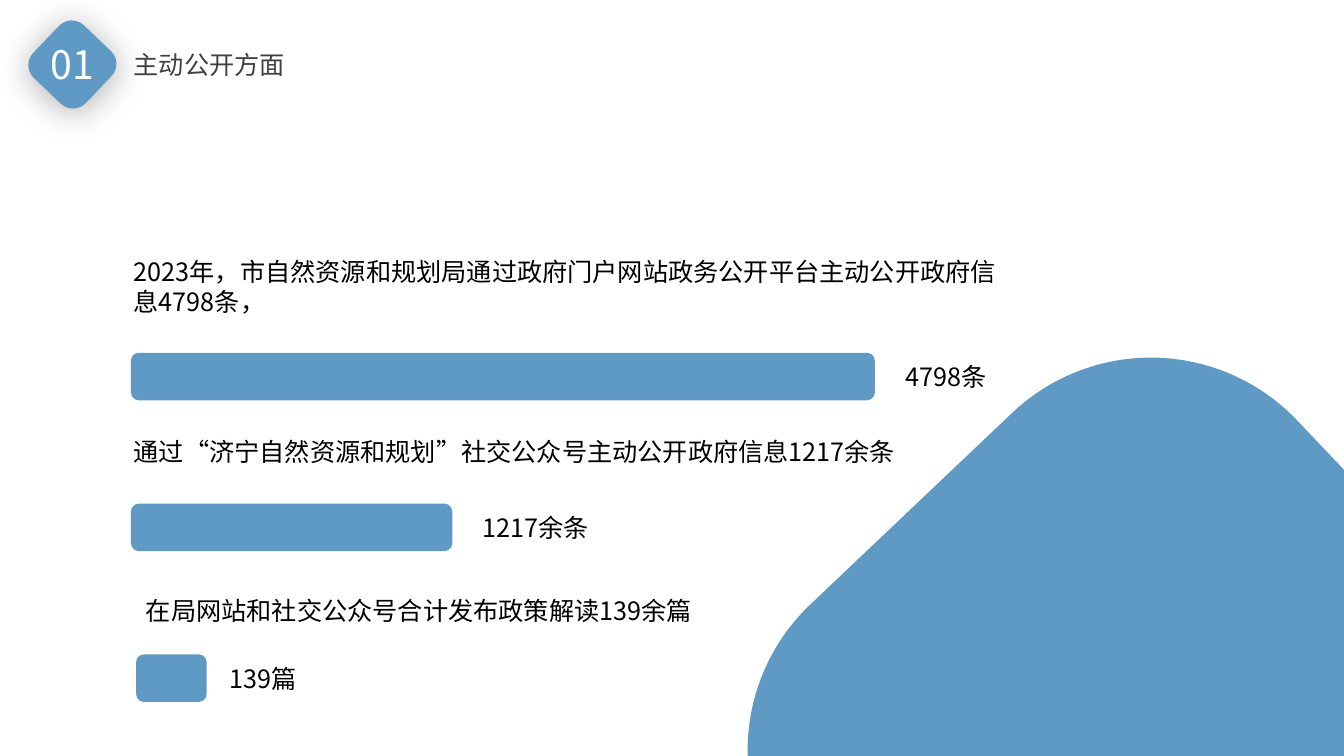
from lxml.etree import SubElement
from pptx import Presentation
from pptx.dml.color import RGBColor
from pptx.enum.shapes import MSO_SHAPE
from pptx.enum.text import MSO_ANCHOR, MSO_AUTO_SIZE, PP_ALIGN
from pptx.oxml.ns import qn
from pptx.util import Cm, Pt

BLUE = RGBColor(0x5E, 0x9A, 0xC3)
GREY = RGBColor(0x40, 0x40, 0x40)
BLACK = RGBColor(0, 0, 0)
WHITE = RGBColor(0xFF, 0xFF, 0xFF)
FACE = "Noto Sans CJK SC"
FRAME = {
    "word_wrap": True,
    "auto_size": MSO_AUTO_SIZE.NONE,
    "vertical_anchor": MSO_ANCHOR.TOP,
    "margin_left": Cm(0.25),
    "margin_right": Cm(0.25),
    "margin_top": Cm(0.13),
    "margin_bottom": Cm(0.13),
}
ROWS = [
    {"text": "2023年，市自然资源和规划局通过政府门户网站政务公开平台主动公开政府信息4798条，",
     "note": "4798条", "left": 3.3, "bar": 18.75, "gap": 0.53,
     "inset": -0.18, "rise": 2.57, "width": 22.78, "tall": 1.8},
    {"text": "通过“济宁自然资源和规划”社交公众号主动公开政府信息1217余条",
     "note": "1217余条", "left": 3.3, "bar": 8.1, "gap": 0.51,
     "inset": -0.18, "rise": 1.83, "width": 22.78, "tall": 1.02},
    {"text": "在局网站和社交公众号合计发布政策解读139余篇",
     "note": "139篇", "left": 3.43, "bar": 1.78, "gap": 0.33,
     "inset": 0, "rise": 1.61, "width": 18.64, "tall": 1.02},
]


def apply(target, values):
    for name, value in values.items():
        setattr(target, name, value)


def write(shape, text, size=18, color=BLACK, align=PP_ALIGN.LEFT):
    frame = shape.text_frame
    apply(frame, FRAME)
    para = frame.paragraphs[0]
    para.alignment = align
    run = para.add_run()
    run.text = text
    apply(run.font, {"name": FACE, "size": Pt(size), "bold": False})
    run.font.color.rgb = color
    SubElement(run.font._element, qn("a:ea"), typeface=FACE)


def label(slide, box, text, **style):
    write(slide.shapes.add_textbox(*map(Cm, box)), text, **style)


def block(slide, box, curve=0.1667, turn=0):
    shape = slide.shapes.add_shape(MSO_SHAPE.ROUNDED_RECTANGLE, *map(Cm, box))
    shape.adjustments[0] = curve
    shape.rotation = turn
    shape.shadow.inherit = False
    shape.fill.solid()
    shape.fill.fore_color.rgb = BLUE
    shape.line.fill.background()
    return shape


def glow(shape):
    list_ = shape._element.spPr.find(qn("a:effectLst"))
    shade = SubElement(list_, qn("a:outerShdw"), blurRad=str(Pt(25)),
                       dist=str(Pt(3)), dir="5400000", algn="t", rotWithShape="0")
    tint = SubElement(shade, qn("a:srgbClr"), val=str(BLACK))
    SubElement(tint, qn("a:alpha"), val="31000")


def header(slide, left, top, size):
    glow(block(slide, (left, top, size, size), 0.241, 313.7))
    label(slide, (left + 0.02, top + 0.18, size - 0.03, 1.45), "01",
          size=28, color=WHITE, align=PP_ALIGN.CENTER)
    title = slide.shapes.title
    apply(title, {"left": Cm(left + 2.21), "top": Cm(top + 0.41),
                  "width": Cm(19), "height": Cm(1.02)})
    write(title, "主动公开方面", color=GREY)


def measure(slide, top, tall, row):
    left, wide = row["left"], row["bar"]
    label(slide, (left + row["inset"], top - row["rise"], row["width"], row["tall"]),
          row["text"])
    block(slide, (left, top, wide, tall))
    label(slide, (left + wide + row["gap"], top + 0.09, 4.1, 1.02), row["note"])


def main():
    deck = Presentation()
    apply(deck, {"slide_width": Cm(33.87), "slide_height": Cm(19.05)})
    slide = deck.slides.add_slide(deck.slide_layouts[5])
    block(slide, (20.29, 10.46, 17.17, 17.17), 0.296, 316.5)
    header(slide, 0.91, 0.71, 1.83)
    for place, row in enumerate(ROWS):
        measure(slide, 8.89 + 3.8 * place, 1.2, row)
    deck.save("out.pptx")


if __name__ == "__main__":
    main()
